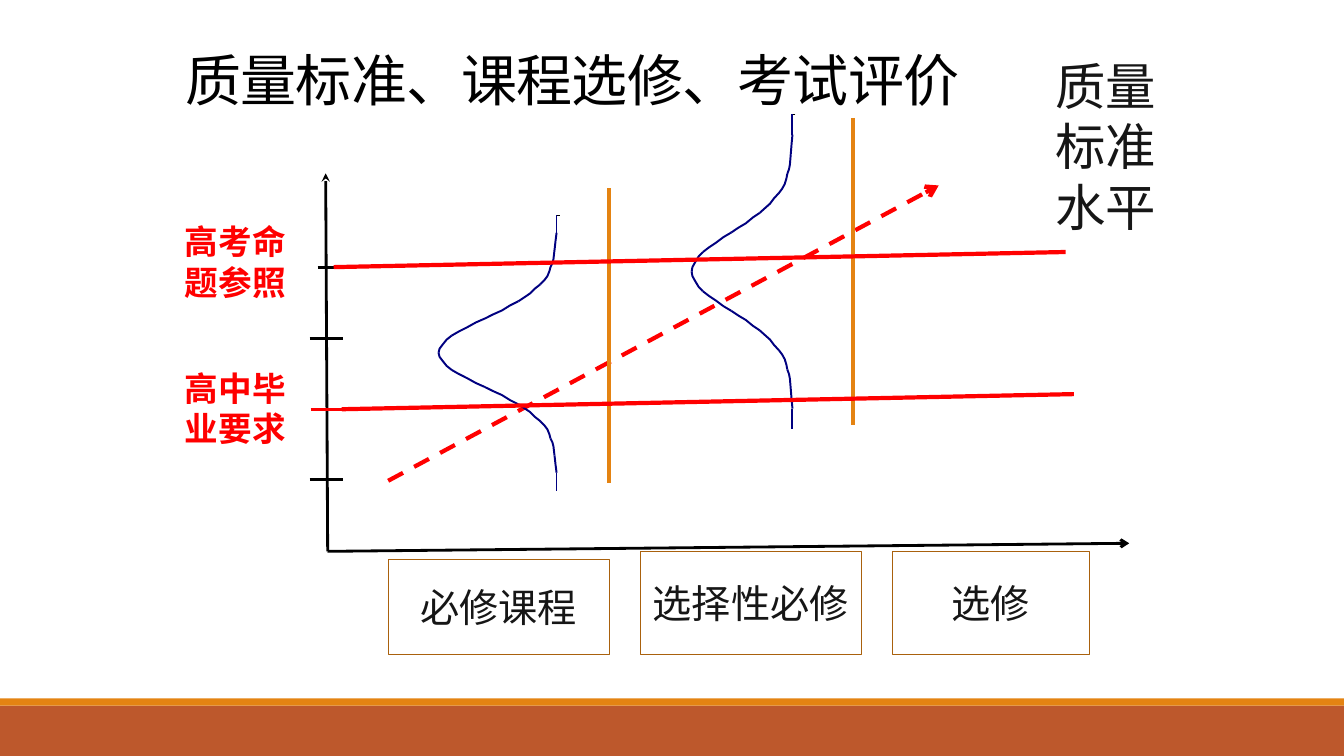
from dataclasses import dataclass

from lxml.etree import SubElement
from pptx import Presentation
from pptx.dml.color import RGBColor
from pptx.enum.dml import MSO_LINE
from pptx.enum.shapes import MSO_CONNECTOR, MSO_SHAPE
from pptx.enum.text import MSO_ANCHOR, PP_ALIGN
from pptx.oxml.ns import qn
from pptx.util import Pt

PX = 9144


@dataclass(frozen=True)
class Theme:
    """Colours, fonts and sizes of the slide."""
    band: str = "BD582C"
    orange: str = "E48312"
    box_line: str = "A9610D"
    black: str = "000000"
    ink: str = "161616"
    red: str = "FF0000"
    navy: str = "000080"
    body_font: str = "Calibri"
    label_font: str = "Arial"
    level_font: str = "Arial Narrow"
    title_size: int = 40
    level_size: int = 36
    course_size: int = 28
    label_size: int = 24
    hairline: float = 0.25
    curve: float = 1.4
    thin: float = 2
    guide: float = 2.25
    thick: float = 3


THEME = Theme()

HALF_BELL = [
    (0, 0), (1, 4), (4, 8), (8, 13), (13, 17), (20, 21), (28, 25), (37, 30),
    (46, 34), (54, 38), (63, 42), (71, 47), (79, 51), (85, 55), (91, 59),
    (96, 64), (101, 68), (105, 72), (108, 76), (110, 81), (111, 85),
    (113, 89), (114, 93), (115, 102), (116, 111), (117, 119), (117, 128),
    (117, 137),
]
BELL_JOINTS = (0, 17, 34, 51, 68, 85, 102, 119, 137)


def emu(*lengths):
    """Turn px lengths into EMU."""
    return [round(length * PX) for length in lengths]


def write(shape, text, font, size, color, bold=False,
          align=PP_ALIGN.CENTER, anchor=MSO_ANCHOR.MIDDLE):
    """Put one formatted paragraph into a shape and return it."""
    frame = shape.text_frame
    frame.text = text
    frame.word_wrap = True
    frame.vertical_anchor = anchor
    paragraph = frame.paragraphs[0]
    paragraph.alignment = align
    style = paragraph.runs[0].font
    style.name, style.size, style.bold = font, Pt(size), bold
    style.color.rgb = RGBColor.from_string(color)
    return paragraph


def add_box(slide, box, fill=None, line=None):
    """Add a rectangle with an optional fill and hairline border."""
    shape = slide.shapes.add_shape(MSO_SHAPE.RECTANGLE, *emu(*box))
    shape.shadow.inherit = False
    if fill:
        shape.fill.solid()
        shape.fill.fore_color.rgb = RGBColor.from_string(fill)
    else:
        shape.fill.background()
    if line:
        shape.line.color.rgb = RGBColor.from_string(line)
        shape.line.width = Pt(THEME.hairline)
    else:
        shape.line.fill.background()
    return shape


def add_line(slide, box, ends, color, width, dash=None, arrow=None):
    """Draw a straight line whose ends are relative to the box."""
    left, top = box[:2]
    x1, y1, x2, y2 = ends
    line = slide.shapes.add_connector(
        MSO_CONNECTOR.STRAIGHT, *emu(left + x1, top + y1, left + x2, top + y2))
    line.line.color.rgb = RGBColor.from_string(color)
    line.line.width = Pt(width)
    if dash:
        line.line.dash_style = dash
    properties = line._element.spPr
    if arrow:
        SubElement(properties.find(qn("a:ln")), qn("a:tailEnd"), type=arrow)
    SubElement(properties, qn("a:effectLst"))


def add_footer(slide, box):
    """Fill the footer with a thin stripe above a wide band."""
    left, top, width, height = box
    stripe = 7
    add_box(slide, (left, top + stripe, width, height - stripe), THEME.band)
    add_box(slide, (left, top, width, stripe), THEME.orange)


def add_title(slide, box):
    """Add the title at the bottom of its box."""
    shape = slide.shapes.add_textbox(*emu(*box))
    paragraph = write(shape, "质量标准、课程选修、考试评价", THEME.body_font,
                      THEME.title_size, THEME.black,
                      align=PP_ALIGN.LEFT, anchor=MSO_ANCHOR.BOTTOM)
    paragraph.line_spacing = 0.85
    paragraph.runs[0].font._element.set("spc", "-50")


def add_label(slide, box, text, font, size, color, bold=False):
    """Add a centred text label."""
    shape = slide.shapes.add_textbox(*emu(*box))
    write(shape, text, font, size, color, bold)


def add_curve(slide, points):
    """Draw an open curve segment through the points."""
    builder = slide.shapes.build_freeform(*emu(*points[0]), scale=1.0)
    builder.add_line_segments([emu(*point) for point in points[1:]], close=False)
    curve = builder.convert_to_shape()
    curve.shadow.inherit = False
    curve.fill.background()
    curve.line.color.rgb = RGBColor.from_string(THEME.navy)
    curve.line.width = Pt(THEME.curve)


def add_bell(slide, box):
    """Draw a bell curve bulging left, in segments, with a cap at its top."""
    left, top, width, height = box
    add_line(slide, box, (width + 3, 0, width, 0), THEME.black, THEME.hairline)
    for side in (1, -1):
        for start, end in zip(BELL_JOINTS, BELL_JOINTS[1:]):
            add_curve(slide, [
                (left + x * width / 117, top + height / 2 + side * y * height / 274)
                for x, y in HALF_BELL if start <= y <= end])


def add_plot(slide, box):
    """Draw axes, ticks, bell curves, level lines and the rising trend."""
    left, top = box[:2]
    add_line(slide, box, (25, 447, 820, 439), THEME.black, THEME.thin, arrow="arrow")
    add_line(slide, box, (85, 377, 631, 84), THEME.red, THEME.thick,
             MSO_LINE.DASH, "arrow")
    for x, start, end in [(304, 87, 379), (546, 17, 322)]:
        add_line(slide, box, (x, start, x, end), THEME.orange, THEME.guide)
    for x, y, width, height in [(135, 113, 117, 274), (386, 13, 100, 313)]:
        add_bell(slide, (left + x, top + y, width, height))
    add_line(slide, box, (25, 447, 23, 72), THEME.black, THEME.thin, arrow="stealth")
    ticks = [(15, 165, THEME.black), (7, 236, THEME.black),
             (8, 306, THEME.red), (7, 376, THEME.black)]
    for x, y, color in ticks:
        add_line(slide, box, (x, y, x + 33, y), color, THEME.thin)
    for x, y in [(39, 306), (31, 165)]:
        add_line(slide, box, (x, y, x + 726, y - 15), THEME.red, THEME.thick)


def add_courses(slide, box):
    """Place the three course boxes along the horizontal axis."""
    left, top, _, height = box
    courses = [("必修课程", 0, 8, 219), ("选择性必修", 250, 0, 219),
               ("选修", 500, 0, 195)]
    for text, x, y, width in courses:
        shape = add_box(slide, (left + x, top + y, width, height - y),
                        line=THEME.box_line)
        write(shape, text, THEME.body_font, THEME.course_size, THEME.ink)


def main():
    """Build and save the slide."""
    presentation = Presentation()
    presentation.slide_width, presentation.slide_height = emu(1333, 750)
    slide = presentation.slides.add_slide(presentation.slide_layouts[6])
    add_footer(slide, (0, 693, 1333, 57))
    add_title(slide, (174, 0, 906, 117))
    add_label(slide, (1034, 47, 125, 195), "质量标准水平",
              THEME.level_font, THEME.level_size, THEME.ink)
    add_plot(slide, (300, 100, 820, 447))
    add_courses(slide, (385, 547, 695, 102))
    for text, top in [("高考命题参照", 222), ("高中毕业要求", 367)]:
        add_label(slide, (167, top, 133, 75), text, THEME.label_font,
                  THEME.label_size, THEME.red, bold=True)
    presentation.save("out.pptx")


if __name__ == "__main__":
    main()
